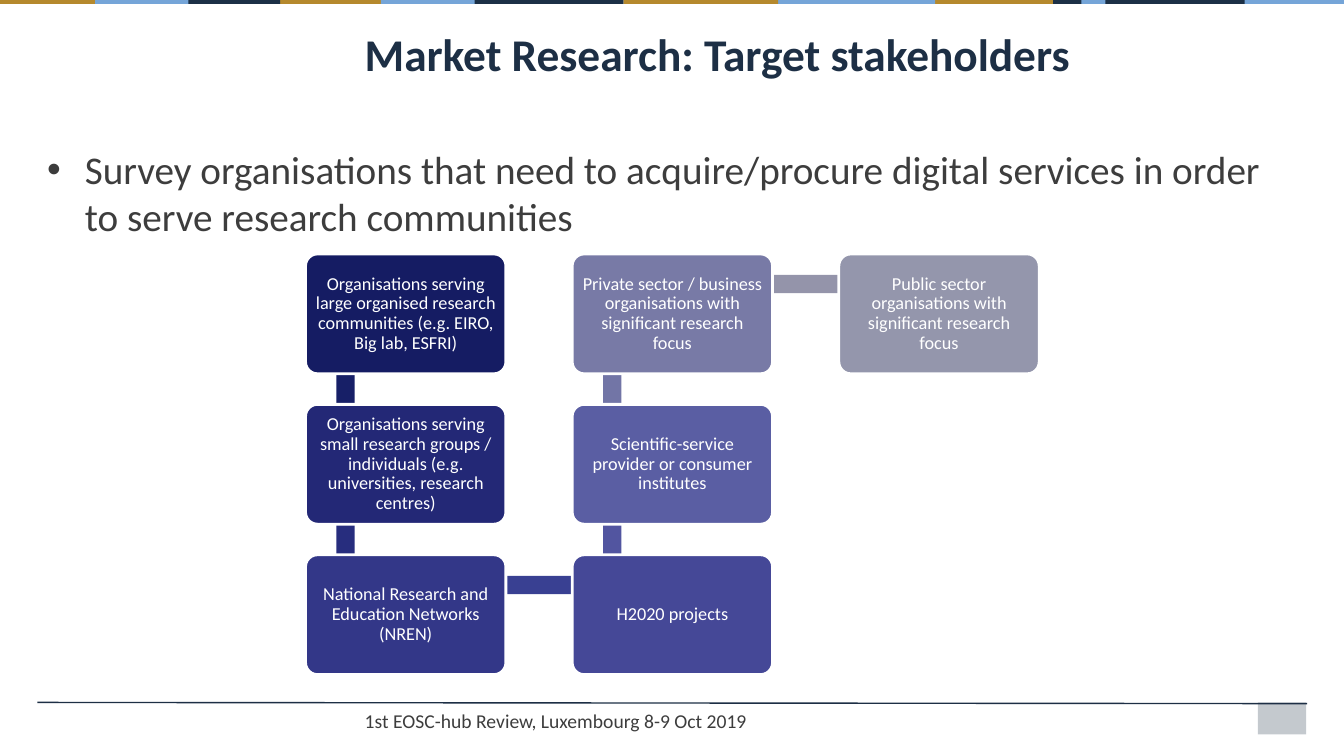
from lxml.etree import SubElement
from pptx import Presentation
from pptx.dml.color import RGBColor
from pptx.enum.shapes import MSO_CONNECTOR, MSO_SHAPE
from pptx.enum.text import MSO_ANCHOR, PP_ALIGN
from pptx.oxml.ns import qn
from pptx.util import Cm, Pt

NAVY = RGBColor(0x1C, 0x30, 0x46)
GOLD = RGBColor(0xB5, 0x89, 0x2D)
BLUE = RGBColor(0x75, 0xA5, 0xD8)
INK = RGBColor(0x1D, 0x2F, 0x45)
GREY = RGBColor(0x3D, 0x3D, 0x3D)
WHITE = RGBColor(0xFF, 0xFF, 0xFF)


def add_block(kind, left, top, width, height, fill):
    shape = slide.shapes.add_shape(kind, Cm(left), Cm(top), Cm(width), Cm(height))
    shape.shadow.inherit = False
    shape.fill.solid()
    shape.fill.fore_color.rgb = fill
    shape.line.fill.background()
    return shape


def write_text(shape, text, size, color, bold=False, bullet=False, margin=None,
               align=PP_ALIGN.LEFT, anchor=MSO_ANCHOR.TOP, spacing=1.0):
    frame = shape.text_frame
    frame.word_wrap = True
    frame.vertical_anchor = anchor
    if margin is not None:
        frame.margin_left = frame.margin_right = Cm(margin)
        frame.margin_top = frame.margin_bottom = Cm(margin)
    paragraph = frame.paragraphs[0]
    paragraph.text = text
    paragraph.alignment = align
    paragraph.line_spacing = spacing
    if bullet:
        properties = paragraph._p.get_or_add_pPr()
        properties.set("marL", str(Cm(0.95)))
        properties.set("indent", str(Cm(-0.95)))
        bullet_color = SubElement(properties, qn("a:buClr"))
        SubElement(bullet_color, qn("a:srgbClr")).set("val", "3C3C3C")
        SubElement(properties, qn("a:buFont")).set("typeface", "Arial")
        SubElement(properties, qn("a:buChar")).set("char", "•")
    font = paragraph.runs[0].font
    font.name = "Calibri"
    font.size = Pt(size)
    font.bold = bold
    font.color.rgb = color


presentation = Presentation()
presentation.slide_width = Cm(33.87)
presentation.slide_height = Cm(19.05)
slide = presentation.slides.add_slide(presentation.slide_layouts[6])

# Page number field and footer rule
number_field = add_block(MSO_SHAPE.RECTANGLE, 31.7, 17.7, 1.22, 0.81, INK)
field_color = number_field.fill._xPr.find(qn("a:solidFill"))[0]
SubElement(field_color, qn("a:alpha")).set("val", "26000")
footer_rule = slide.shapes.add_connector(
    MSO_CONNECTOR.STRAIGHT, Cm(32.94), Cm(17.73), Cm(0.94), Cm(17.7))
footer_rule.line.color.rgb = INK
footer_rule.line.width = Pt(1)
SubElement(footer_rule._element.spPr, qn("a:effectLst"))

# Coloured strip along the top edge, overlapping from back to front
STRIPES = [
    (11.53, 4.19, NAVY), (22, 11.73, GOLD), (31.12, 2.77, BLUE), (7.06, 3.76, GOLD),
    (26.54, 4.83, NAVY), (19.33, 4.24, BLUE), (4.72, 2.34, NAVY), (2.39, 2.36, BLUE),
    (9.6, 2.36, BLUE), (15.72, 3.89, GOLD), (27.25, 0.61, BLUE), (0, 2.39, GOLD),
]
for left, width, color in STRIPES:
    add_block(MSO_SHAPE.RECTANGLE, left, 0, width, 0.1, color)

# Title, bullet and footer
TEXTS = [
    ((8.94, 0.53, 24, 1.5), "Market Research: Target stakeholders",
     dict(size=32.4, color=INK, bold=True)),
    ((0.94, 3.53, 32, 13.49),
     "Survey organisations that need to acquire/procure digital services in order "
     "to serve research communities", dict(size=28, color=GREY, bullet=True)),
    ((8.94, 17.73, 15.19, 0.79), "1st EOSC-hub Review, Luxembourg 8-9 Oct 2019",
     dict(size=14, color=GREY)),
]
for position, text, style in TEXTS:
    text_box = slide.shapes.add_textbox(*[Cm(value) for value in position])
    write_text(text_box, text, **style)

# Stakeholder chain: down, up, then across
GRID_LEFT, GRID_TOP = 7.7, 6.4
COLUMN_STEP, ROW_STEP = 6.72, 3.79
BOX_WIDTH, BOX_HEIGHT = 5.05, 3.02
LINK_THICKNESS = 0.46

# Links: column, row of the upper or left box, direction, colour
LINKS = [
    (0, 0, "down", "171F67"), (0, 1, "down", "272D7E"), (0, 2, "across", "394092"),
    (1, 1, "down", "5255A0"), (1, 0, "down", "7275A6"), (1, 0, "across", "9494AA"),
]
for column, row, direction, color in LINKS:
    left = GRID_LEFT + column * COLUMN_STEP
    top = GRID_TOP + row * ROW_STEP
    if direction == "down":
        area = (left + 0.78, top + 0.76, LINK_THICKNESS, ROW_STEP)
    else:
        area = (left + 1.02, top + 0.53, COLUMN_STEP, LINK_THICKNESS)
    add_block(MSO_SHAPE.RECTANGLE, *area, RGBColor.from_string(color))

STAKEHOLDERS = [
    (0, 0, "151C63", "Organisations serving large organised research communities "
                     "(e.g. EIRO, Big lab, ESFRI)"),
    (0, 1, "232876", "Organisations serving small research groups / individuals "
                     "(e.g. universities, research centres)"),
    (0, 2, "333788", "National Research and Education Networks (NREN)"),
    (1, 2, "454897", "H2020 projects"),
    (1, 1, "5A5EA3", "Scientific-service provider or consumer institutes"),
    (1, 0, "787AA6", "Private sector / business organisations with significant research focus"),
    (2, 0, "9496AC", "Public sector organisations with significant research focus"),
]
for column, row, color, text in STAKEHOLDERS:
    box = add_block(MSO_SHAPE.ROUNDED_RECTANGLE, GRID_LEFT + column * COLUMN_STEP,
                    GRID_TOP + row * ROW_STEP, BOX_WIDTH, BOX_HEIGHT,
                    RGBColor.from_string(color))
    box.adjustments[0] = 0.1
    box.line.color.rgb = WHITE
    box.line.width = Pt(2)
    write_text(box, text, size=13, color=WHITE, margin=0.13, align=PP_ALIGN.CENTER,
               anchor=MSO_ANCHOR.MIDDLE, spacing=0.9)

presentation.save("out.pptx")
